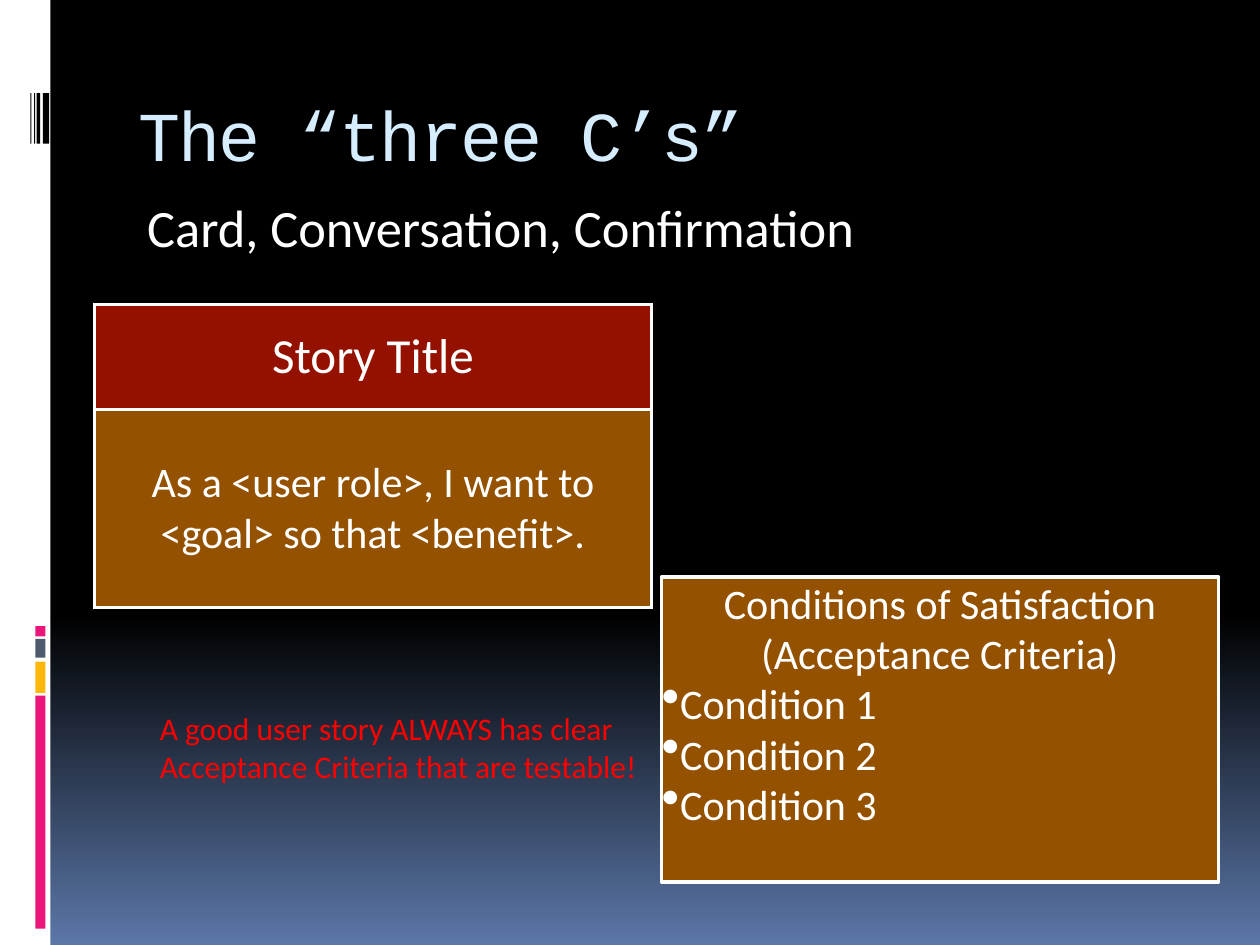
"""Build the slide about the three C's of a user story."""
from copy import deepcopy

from lxml.etree import SubElement
from pptx import Presentation
from pptx.dml.color import RGBColor
from pptx.enum.shapes import MSO_SHAPE as Shape
from pptx.enum.text import MSO_ANCHOR as Anchor, PP_ALIGN as Align
from pptx.oxml.ns import qn
from pptx.util import Inches, Pt

WHITE = RGBColor(0xFF, 0xFF, 0xFF)
BLACK = RGBColor(0x00, 0x00, 0x00)
BLUE = RGBColor(0x5B, 0x77, 0xA8)
PINK = RGBColor(0xEA, 0x15, 0x7A)
YELLOW = RGBColor(0xFE, 0xB8, 0x0A)
SLATE = RGBColor(0x4E, 0x5B, 0x6F)
BROWN = RGBColor(0x94, 0x52, 0x00)
DARK_RED = RGBColor(0x94, 0x11, 0x00)
RED = RGBColor(0xFF, 0x00, 0x00)
PALE_BLUE = RGBColor(0xD6, 0xEC, 0xFF)


def write(para, text, size=24, color=WHITE, font="Calibri", align=Align.LEFT,
          bullet=False, spacing=None):
    para.text = text
    para.alignment = align
    for span in para.runs:
        span.font.size = Pt(size)
        span.font.name = font
        span.font.color.rgb = color
        if spacing is not None:
            span.font._element.set("spc", str(spacing))
    if bullet:
        props = para._p.get_or_add_pPr()
        SubElement(props, qn("a:buSzPct")).set("val", "125000")
        SubElement(props, qn("a:buChar")).set("char", "•")


deck = Presentation()
deck.slide_width, deck.slide_height = Inches(10), Inches(7.5)
page = deck.slides.add_slide(deck.slide_layouts[6])

backdrop = page.background.fill
backdrop.gradient()
backdrop.gradient_angle = 270
stop_list = page.element.find(".//" + qn("a:gsLst"))
stop_list.append(deepcopy(stop_list[-1]))
stops = [(0, BLACK), (0.65, BLACK), (1, BLUE)]
for stop, (position, color) in zip(backdrop.gradient_stops, stops):
    stop.position = position
    stop.color.rgb = color

bars = [
    (0, 0, 0.4, 7.5, WHITE),
    (0.28, 5.52, 0.08, 1.85, PINK),
    (0.28, 5.25, 0.08, 0.25, YELLOW),
    (0.28, 5.07, 0.08, 0.15, SLATE),
    (0.28, 4.97, 0.08, 0.08, PINK),
    (0.34, 0.74, 0.05, 0.4, BLACK),
    (0.29, 0.74, 0.03, 0.4, BLACK),
    (0.27, 0.74, 0.01, 0.4, BLACK),
    (0.24, 0.74, 0.01, 0.4, BLACK),
]
for *place, color in bars:
    bar = page.shapes.add_shape(Shape.RECTANGLE, *map(Inches, place))
    bar.shadow.inherit = False
    bar.fill.solid()
    bar.fill.fore_color.rgb = color
    bar.line.fill.background()

outline = page.shapes.build_freeform(Inches(5.25), Inches(4.58))
corners = [(9.67, 4.58), (9.67, 7), (5.25, 7)]
outline.add_line_segments([(Inches(x), Inches(y)) for x, y in corners])
conditions = outline.convert_to_shape()
conditions.shadow.inherit = False
conditions.fill.solid()
conditions.fill.fore_color.rgb = BROWN
conditions.line.color.rgb = WHITE
conditions.line.width = Pt(2)
frame = conditions.text_frame
frame.word_wrap = True
frame.vertical_anchor = Anchor.TOP
frame.margin_left = frame.margin_right = frame.margin_top = frame.margin_bottom = 0
write(frame.paragraphs[0], "Conditions of Satisfaction", align=Align.CENTER)
write(frame.add_paragraph(), "(Acceptance Criteria)", align=Align.CENTER)
for number in range(1, 4):
    write(frame.add_paragraph(), f"Condition {number}", bullet=True)

title = page.shapes.add_textbox(Inches(1), Inches(0.56), Inches(8.5), Inches(1))
title.text_frame.word_wrap = True
title.text_frame.vertical_anchor = Anchor.MIDDLE
write(title.text_frame.paragraphs[0], "The “three C’s”", size=40,
      color=PALE_BLUE, font="Courier New", spacing=-100)

subtitle = page.shapes.add_textbox(Inches(1), Inches(1.5), Inches(8.5), Inches(1))
subtitle.text_frame.word_wrap = True
para = subtitle.text_frame.paragraphs[0]
write(para, "Card, Conversation, Confirmation", size=30)
para.space_before = Pt(7)
para._p.get_or_add_pPr().set("marL", str(Inches(0.07)))

card = page.shapes.add_table(2, 1, Inches(0.75), Inches(2.42),
                             Inches(4.42), Inches(2.4)).table
rows = [
    (0.83, "Story Title", 28, DARK_RED),
    (1.57, "As a <user role>, I want to <goal> so that <benefit>.", 24, BROWN),
]
for index, (height, text, size, color) in enumerate(rows):
    card.rows[index].height = Inches(height)
    cell = card.cell(index, 0)
    cell.vertical_anchor = Anchor.MIDDLE
    cell.margin_left = cell.margin_right = Inches(0.06)
    cell.margin_top = cell.margin_bottom = Inches(0.06)
    write(cell.text_frame.paragraphs[0], text, size=size, align=Align.CENTER)
    for side in ("L", "R", "T", "B"):
        border = SubElement(cell._tc.get_or_add_tcPr(), qn(f"a:ln{side}"))
        border.set("w", str(Pt(2)))
        paint = SubElement(border, qn("a:solidFill"))
        SubElement(paint, qn("a:srgbClr")).set("val", str(WHITE))
    cell.fill.solid()
    cell.fill.fore_color.rgb = color

advice = page.shapes.add_textbox(Inches(1.17), Inches(5.58), Inches(4.07), Inches(0.71))
advice.text_frame.word_wrap = False
write(advice.text_frame.paragraphs[0],
      "A good user story ALWAYS has clear\vAcceptance Criteria that are testable!",
      size=18, color=RED)

deck.save("out.pptx")
